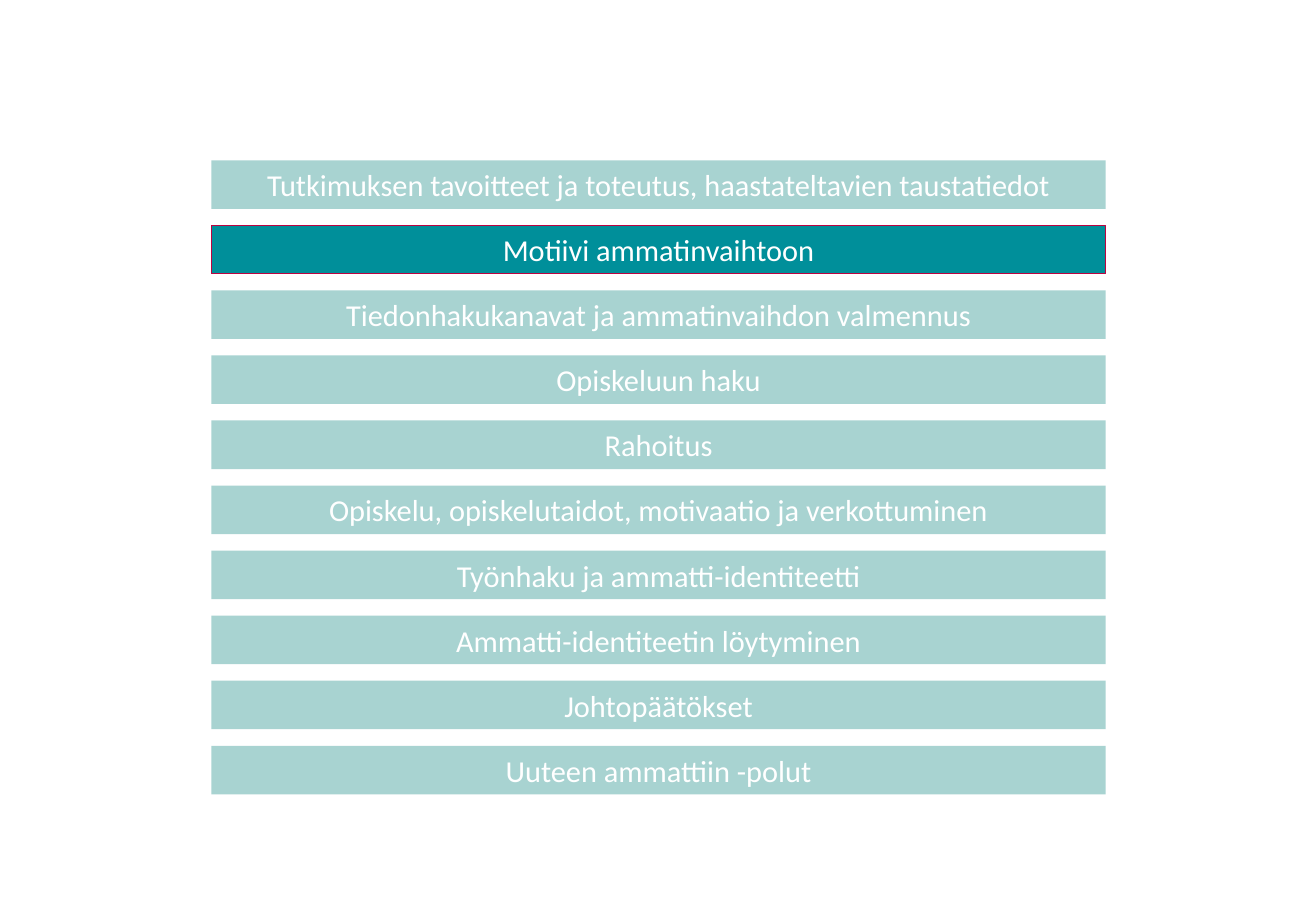
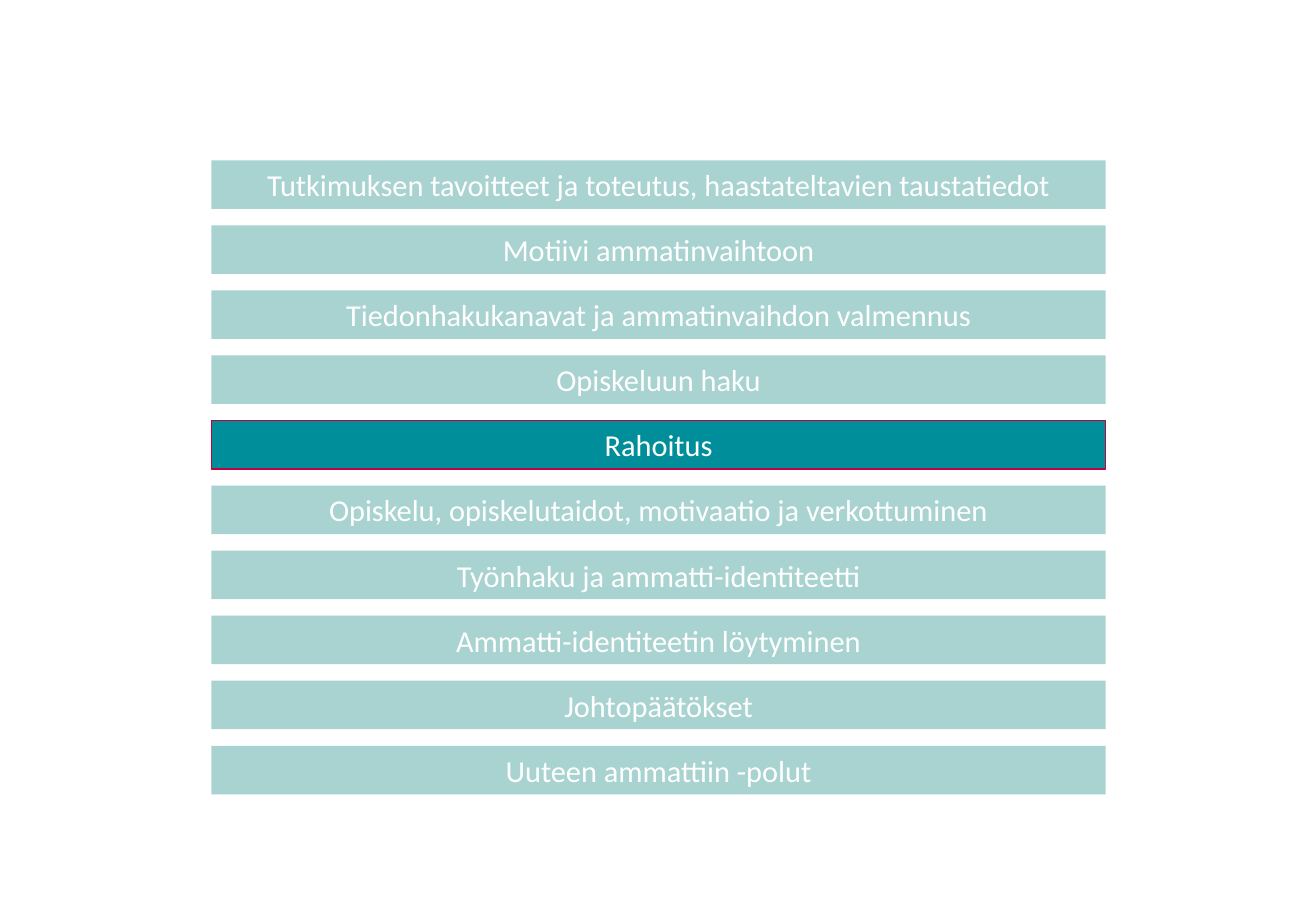
"""Build two agenda slides, each with its current topic lit."""
from dataclasses import dataclass

from pptx import Presentation
from pptx.dml.color import RGBColor
from pptx.enum.shapes import MSO_SHAPE
from pptx.enum.text import MSO_ANCHOR, MSO_AUTO_SIZE, PP_ALIGN
from pptx.slide import Slide
from pptx.util import Inches, Pt

RECT = MSO_SHAPE.RECTANGLE
MIDDLE = MSO_ANCHOR.MIDDLE
GROW = MSO_AUTO_SIZE.SHAPE_TO_FIT_TEXT
CENTER = PP_ALIGN.CENTER
BLANK = 6


@dataclass(frozen=True)
class Theme:
    pale: RGBColor = RGBColor.from_string("A8D3D1")
    teal: RGBColor = RGBColor.from_string("008F9A")
    edge: RGBColor = RGBColor.from_string("BB0441")
    white: RGBColor = RGBColor.from_string("FFFFFF")
    font: str = "Calibri"
    size: Pt = Pt(18)
    line: Pt = Pt(0.75)


@dataclass(frozen=True)
class Grid:
    left: float = 1.74
    width: float = 7.36
    first: float = 1.32
    last: float = 6.14
    height: float = 0.4

    def top(self, row: int, count: int) -> float:
        return self.first + row * (self.last - self.first) / (count - 1)


@dataclass(frozen=True)
class Bar:
    text: str
    row: int
    lit: bool


THEME = Theme()
GRID = Grid()
WIDTH, HEIGHT = 10.83, 7.5
TOPICS = (
    "Tutkimuksen tavoitteet ja toteutus, haastateltavien taustatiedot",
    "Motiivi ammatinvaihtoon",
    "Tiedonhakukanavat ja ammatinvaihdon valmennus",
    "Opiskeluun haku",
    "Rahoitus",
    "Opiskelu, opiskelutaidot, motivaatio ja verkottuminen",
    "Työnhaku ja ammatti-identiteetti",
    "Ammatti-identiteetin löytyminen",
    "Johtopäätökset",
    "Uuteen ammattiin -polut",
)
CURRENT = ("Motiivi ammatinvaihtoon", "Rahoitus")


def draw_bar(slide: Slide, bar: Bar) -> None:
    top = GRID.top(bar.row, len(TOPICS))
    shape = slide.shapes.add_shape(
        RECT, Inches(GRID.left), Inches(top), Inches(GRID.width), Inches(GRID.height)
    )
    shape.shadow.inherit = False
    shape.fill.solid()
    shape.fill.fore_color.rgb = THEME.teal if bar.lit else THEME.pale
    if bar.lit:
        shape.line.color.rgb = THEME.edge
        shape.line.width = THEME.line
    else:
        shape.line.fill.background()
    frame = shape.text_frame
    frame.word_wrap = True
    frame.auto_size = GROW
    frame.vertical_anchor = MIDDLE
    frame.text = bar.text
    para = frame.paragraphs[0]
    para.alignment = CENTER
    font = para.runs[0].font
    font.name, font.size = THEME.font, THEME.size
    font.color.rgb = THEME.white


def main() -> None:
    deck = Presentation()
    deck.slide_width, deck.slide_height = Inches(WIDTH), Inches(HEIGHT)
    for topic in CURRENT:
        slide = deck.slides.add_slide(deck.slide_layouts[BLANK])
        for row, text in enumerate(TOPICS):
            draw_bar(slide, Bar(text, row, text == topic))
    deck.save("out.pptx")


if __name__ == "__main__":
    main()
